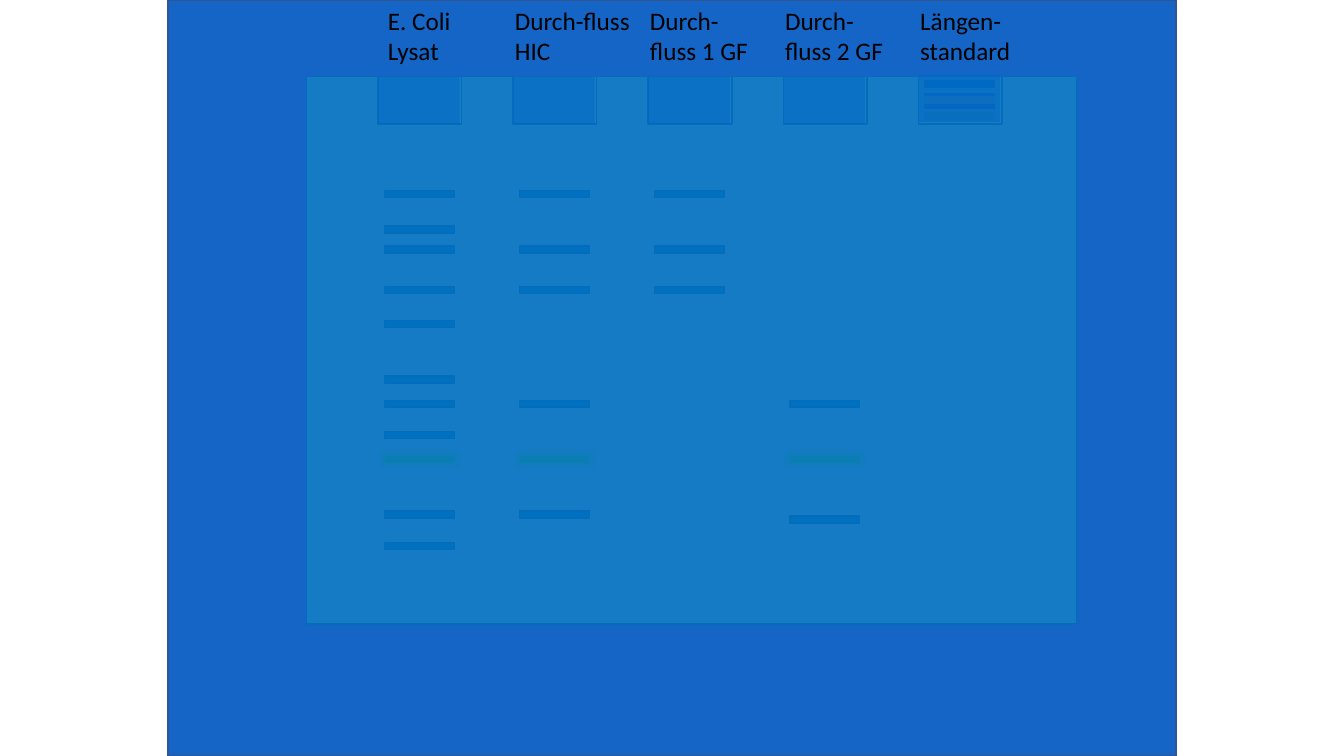
from lxml import etree
from pptx import Presentation
from pptx.dml.color import RGBColor
from pptx.enum import shapes, text
from pptx.oxml import ns
from pptx.util import Pt

VIOLET = RGBColor(0xCC, 0x00, 0xFF)
EDGE = RGBColor(0x32, 0x54, 0x91)
GEL = RGBColor(0xDA, 0xE3, 0xF3)
WELL = RGBColor(0xDE, 0xEB, 0xF7)
SAMPLE = RGBColor(0x00, 0x00, 0xFF)
BLUE = RGBColor(0x00, 0x70, 0xC0)
GREEN = RGBColor(0x66, 0xFF, 0x33)
PURPLE = RGBColor(0x70, 0x30, 0xA0)
GOLD = RGBColor(0xFF, 0xD9, 0x66)
YELLOW = RGBColor(0xFF, 0xFF, 0x00)
SKY = RGBColor(0x00, 0xB0, 0xF0)
LIME = RGBColor(0x92, 0xD0, 0x50)
PEACH = RGBColor(0xF4, 0xB1, 0x83)
BLACK = RGBColor(0x00, 0x00, 0x00)

# label, label left, label width, tops of blue bands, tops of green bands
LANES = [
    ("E. Coli Lysat", 270, 67.7,
     [128.2, 153.4, 167.8, 196.6, 221, 260.6, 277.9, 300.2, 357.1, 379.4], [317.5]),
    ("Durch-fluss HIC", 360.7, 96.5, [128.2, 167.8, 196.6, 277.9, 357.1], [317.5]),
    ("Durch-fluss 1 GF", 457.2, 85, [128.2, 167.8, 196.6], []),
    ("Durch-fluss 2 GF", 553.7, 90.7, [277.9, 360.7], [317.5]),
    ("Längen-standard", 650.2, 79.2, [], []),
]
# top, fill, line of the stacked ladder bands, back to front
LADDER = [
    (64.8, PURPLE, PURPLE), (61.2, BLUE, BLUE), (59, BLUE, EDGE),
    (61.2, GOLD, GOLD), (61.2, YELLOW, YELLOW), (49.7, SKY, SKY),
    (49.7, BLUE, EDGE), (72.7, LIME, LIME), (59, BLUE, BLUE),
    (61.2, PEACH, PEACH),
]
LEFT, PITCH, TOP = 270, 96.5, 54.7
RECT = shapes.MSO_SHAPE.RECTANGLE
MINUS = shapes.MSO_SHAPE.MATH_MINUS
FRAME = (120, 0, 720, 540)


def draw(host, kind, box, fill, line=None, alpha=None):
    part = host.add_shape(kind, *map(Pt, box))
    part.shadow.inherit = False
    part.fill.solid()
    part.fill.fore_color.rgb = fill
    if line is None:
        part.line.fill.background()
    else:
        part.line.color.rgb = line
        part.line.width = Pt(1)
    if alpha:
        set_alpha(part.fill._xPr.find(".//" + ns.qn("a:srgbClr")), alpha)
    return part


def set_alpha(color, share):
    etree.SubElement(color, ns.qn("a:alpha")).set("val", str(share * 1000))


def band(host, lane, top, fill, line=None):
    box = (LEFT + lane * PITCH - 4.2, top, 67.7, 20.9)
    return draw(host, MINUS, box, fill, line)


def glow(part, color, size):
    effects = part._element.spPr.find(ns.qn("a:effectLst"))
    halo = etree.SubElement(effects, ns.qn("a:glow"), rad=str(Pt(size)))
    tint = etree.SubElement(halo, ns.qn("a:srgbClr"), val=str(color))
    set_alpha(tint, 40)


def label(host, words, left, width):
    box = host.add_textbox(Pt(left), 0, Pt(width), Pt(51))
    frame = box.text_frame
    frame.word_wrap = True
    frame.auto_size = text.MSO_AUTO_SIZE.SHAPE_TO_FIT_TEXT
    line = frame.paragraphs[0]
    line.text = words
    line.font.name = "Calibri"
    line.font.size = Pt(18)
    line.font.color.rgb = BLACK


def main():
    deck = Presentation()
    deck.slide_width, deck.slide_height = Pt(960), Pt(540)
    parts = deck.slides.add_slide(deck.slide_layouts[6]).shapes

    draw(parts, RECT, FRAME, VIOLET, EDGE)
    gel = parts.add_group_shape().shapes
    draw(gel, RECT, (218.9, TOP, 550, 391), GEL, EDGE)
    for lane in range(len(LANES)):
        draw(gel, RECT, (LEFT + lane * PITCH, TOP, 59.8, 33.8), WELL, EDGE)

    last = len(LANES) - 1
    for top, fill, line in LADDER:
        band(parts, last, top, fill, line)
    for lane, (_, _, _, blues, greens) in enumerate(LANES):
        top = 53.3 if lane == last else TOP
        draw(parts, RECT, (LEFT + lane * PITCH, top, 58.3, 33.8), SAMPLE, alpha=47)
        for top in greens:
            glow(band(parts, lane, top, GREEN), GREEN, 5)
        for top in blues:
            band(parts, lane, top, BLUE, EDGE)

    draw(parts, RECT, FRAME, BLUE, EDGE, alpha=90)
    for words, left, width, _, _ in LANES:
        label(parts, words, left, width)
    deck.save("out.pptx")


if __name__ == "__main__":
    main()
